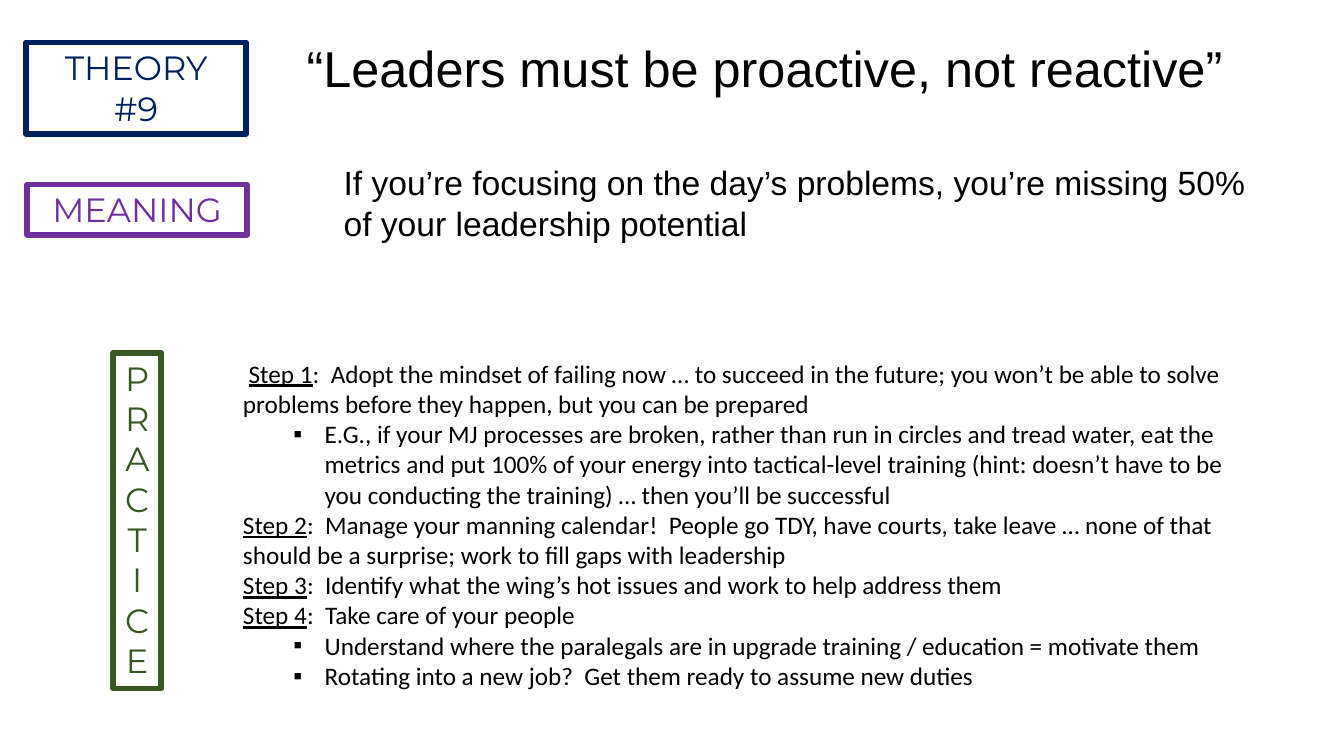
"""Build the leadership theory slide with its labels, quote, meaning and steps."""
from dataclasses import dataclass

from lxml import etree
from pptx import Presentation
from pptx.dml.color import RGBColor
from pptx.enum.shapes import MSO_SHAPE
from pptx.enum.text import MSO_ANCHOR, MSO_AUTO_SIZE, PP_ALIGN
from pptx.oxml.ns import qn
from pptx.util import Inches, Pt

RECTANGLE = MSO_SHAPE.RECTANGLE
TOP = MSO_ANCHOR.TOP
NO_FIT = MSO_AUTO_SIZE.NONE
LEFT, CENTER = PP_ALIGN.LEFT, PP_ALIGN.CENTER

COLORS = {"navy": "002060", "green": "385723", "purple": "7030A0", "black": "000000"}
FRAME_FORMAT = {
    "word_wrap": True, "auto_size": NO_FIT, "vertical_anchor": TOP,
    "margin_left": Inches(0.1), "margin_right": Inches(0.1),
    "margin_top": Inches(0.05), "margin_bottom": Inches(0.05),
}
PARAGRAPH_FORMAT = {"space_before": Pt(0), "space_after": Pt(0), "line_spacing": 1.0}


@dataclass
class Style:
    """Font and alignment of a text."""
    font: str
    size: int
    color: str = "black"
    align: PP_ALIGN = LEFT


@dataclass
class Label:
    """Outlined box naming a section."""
    lines: tuple[str, ...]
    color: str
    box: tuple[float, float, float, float]


@dataclass
class Line:
    """Paragraph of (text, underlined) runs, bulleted at level 1."""
    runs: tuple[tuple[str, bool], ...]
    level: int = 0


def step(number: int, text: str) -> tuple[tuple[str, bool], ...]:
    """Return the runs of a numbered step."""
    return (f"Step {number}", True), (f":  {text}", False)


def bullet(text: str) -> Line:
    """Return a bulleted line."""
    return Line(((text, False),), 1)


LABELS = [
    Label(("THEORY", "#9"), "navy", (0.26, 0.42, 2.18, 0.91)),
    Label(("PRACTICE",), "green", (1.12, 3.5, 0.48, 3.33)),
    Label(("MEANING",), "purple", (0.27, 1.83, 2.18, 0.5)),
]
QUOTE = "“Leaders must be proactive, not reactive” "
MEANING = ("If you’re focusing on the day’s problems, you’re missing 50% "
           "of your leadership potential")
STEPS = [
    Line(((" ", False),) + step(1, "Adopt the mindset of failing now … to succeed in the future; "
         "you won’t be able to solve problems before they happen, but you can be prepared")),
    bullet("E.G., if your MJ processes are broken, rather than run in circles and tread water, "
           "eat the metrics and put 100% of your energy into tactical-level training (hint: "
           "doesn’t have to be you conducting the training) … then you’ll be successful"),
    Line(step(2, "Manage your manning calendar!  People go TDY, have courts, take leave … "
              "none of that should be a surprise; work to fill gaps with leadership")),
    Line(step(3, "Identify what the wing’s hot issues and work to help address them")),
    Line(step(4, "Take care of your people")),
    bullet("Understand where the paralegals are in upgrade training / education = motivate them"),
    bullet("Rotating into a new job?  Get them ready to assume new duties"),
]


def set_format(target: object, values: dict) -> None:
    """Set each named attribute on the target."""
    for name, value in values.items():
        setattr(target, name, value)


def place(sp, box: tuple[float, float, float, float]) -> None:
    """Move and size a shape in inches."""
    set_format(sp, dict(zip(("left", "top", "width", "height"), map(Inches, box))))


def set_bullet(p, level: int) -> None:
    """Indent a paragraph and set or clear its bullet."""
    p.level = level
    pPr = p._p.get_or_add_pPr()
    pPr.set("marL", str(Inches(0.81 * level)))
    pPr.set("indent", str(Inches(-0.31 * level)))
    if level:
        etree.SubElement(pPr, qn("a:buFont")).set("typeface", "Arial")
        etree.SubElement(pPr, qn("a:buChar")).set("char", "▪")
    else:
        etree.SubElement(pPr, qn("a:buNone"))


def write(sp, lines: list[Line], style: Style) -> None:
    """Fill a shape with formatted paragraphs."""
    tf = sp.text_frame
    set_format(tf, FRAME_FORMAT)
    for i, line in enumerate(lines):
        p = tf.add_paragraph() if i else tf.paragraphs[0]
        set_format(p, PARAGRAPH_FORMAT | {"alignment": style.align})
        set_bullet(p, line.level)
        for text, underlined in line.runs:
            r = p.add_run()
            r.text = text
            set_format(r.font, {"name": style.font, "size": Pt(style.size),
                                "underline": underlined})
            r.font.color.rgb = RGBColor.from_string(COLORS[style.color])


def plain(*texts: str) -> list[Line]:
    """Return one unformatted line per text."""
    return [Line(((text, False),)) for text in texts]


def add_label(s, label: Label) -> None:
    """Draw an outlined section label."""
    sp = s.shapes.add_shape(RECTANGLE, *map(Inches, label.box))
    sp.shadow.inherit = False
    sp.fill.background()
    sp.line.color.rgb = RGBColor.from_string(COLORS[label.color])
    sp.line.width = Pt(4)
    write(sp, plain(*label.lines), Style("Montserrat", 24, label.color, CENTER))


def main() -> None:
    """Build and save the slide."""
    prs = Presentation()
    set_format(prs, {"slide_width": Inches(13.33), "slide_height": Inches(7.5)})
    s = prs.slides.add_slide(prs.slide_layouts[1])
    title, body = s.placeholders
    place(title, (2.94, 0.32, 9.29, 0.71))
    write(title, plain(QUOTE), Style("Arial", 36, align=CENTER))
    place(body, (2.31, 3.5, 10.2, 3.43))
    write(body, STEPS, Style("Calibri", 18))
    for label in LABELS:
        add_label(s, label)
    meaning = s.shapes.add_textbox(*map(Inches, (3.31, 1.56, 9.2, 0.91)))
    write(meaning, plain(MEANING), Style("Arial", 24))
    prs.save("out.pptx")


if __name__ == "__main__":
    main()
